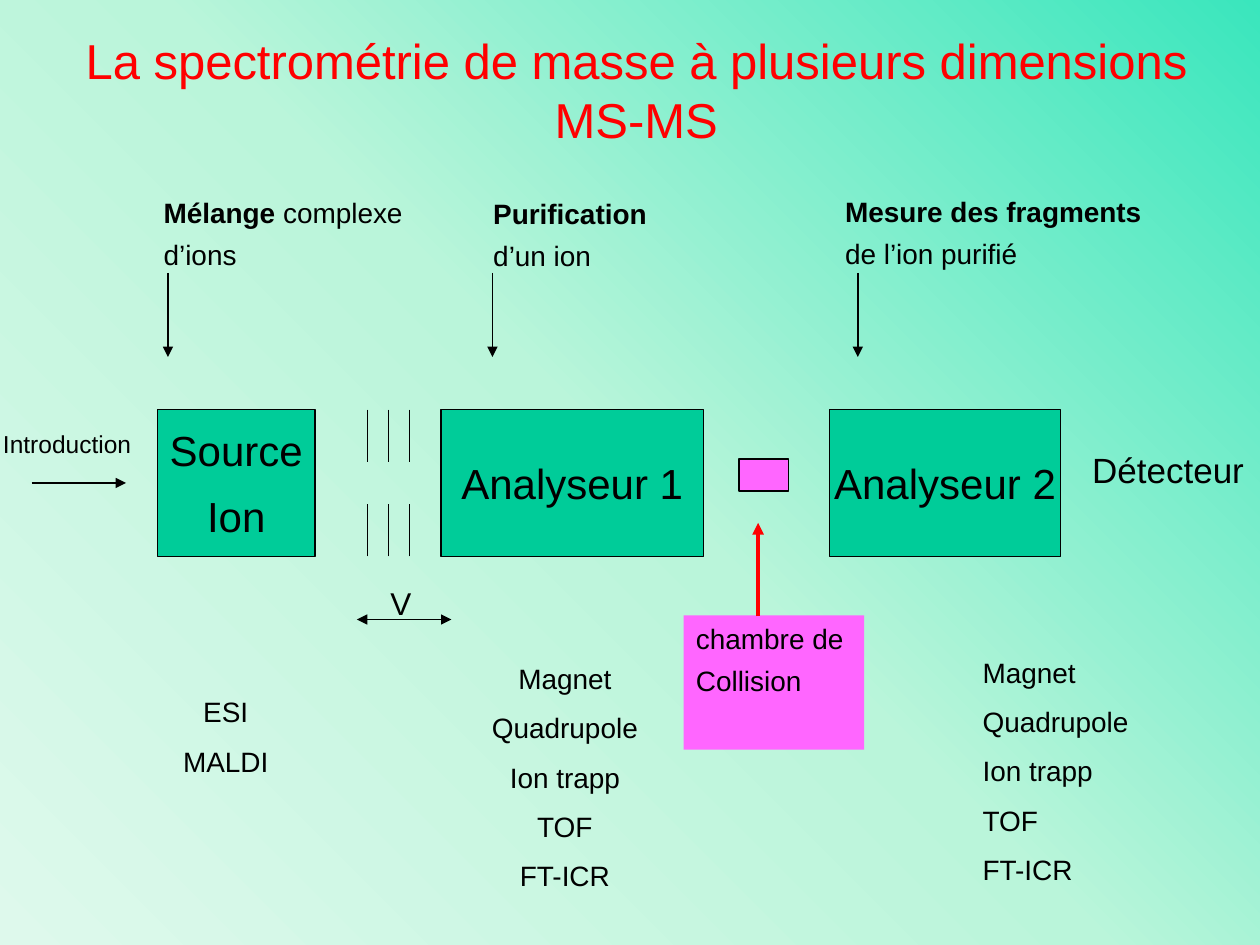
from copy import deepcopy
from dataclasses import dataclass

from lxml import etree
from pptx import Presentation
from pptx import util as u
from pptx.dml.color import RGBColor
from pptx.enum import shapes, text
from pptx.oxml.ns import qn


@dataclass(frozen=True)
class Theme:
    font: str = "Arial"
    ink: str = "000000"
    red: str = "FF0000"
    teal: str = "00CC99"
    pink: str = "FF66FF"
    back: tuple = ((0, "3AE6BD"), (0.5, "BAF5DA"), (1, "DEF9EC"))
    title: int = 28
    block: int = 24
    end: int = 20
    volt: int = 18
    body: int = 16
    small: int = 14


T = Theme()
COLS, ROWS = 120, 90
WIDE, HIGH = u.Inches(10), u.Inches(7.5)
MID, LEFT = text.PP_ALIGN.CENTER, text.PP_ALIGN.LEFT
TRAPS = ["Magnet", "Quadrupole", "Ion trapp", "TOF", "FT-ICR"]


def rgb(code):
    return RGBColor.from_string(code)


def grid(*vals):
    """Turn alternating columns and rows into slide lengths."""
    return [int(v * (HIGH / ROWS if i % 2 else WIDE / COLS))
            for i, v in enumerate(vals)]


def write(shape, lines, size=T.body, color=T.ink, align=MID, gap=9,
          wrap=False, anchor=text.MSO_ANCHOR.TOP):
    """Fill a shape with paragraphs; words between asterisks are bold."""
    frame = shape.text_frame
    frame.word_wrap = wrap
    frame.vertical_anchor = anchor
    for i, line in enumerate(lines):
        para = frame.paragraphs[0] if i == 0 else frame.add_paragraph()
        para.alignment = align
        para.space_before = u.Pt(gap)
        for j, part in enumerate(line.split("*")):
            if not part:
                continue
            run = para.add_run()
            run.text = part
            font = run.font
            font.name, font.size, font.bold = T.font, u.Pt(size), j % 2 == 1
            font.color.rgb = rgb(color)


def label(slide, at, lines, **fmt):
    write(slide.shapes.add_textbox(*grid(*at)), lines, **fmt)


def box(slide, at, fill, width=0.75):
    shape = slide.shapes.add_shape(shapes.MSO_SHAPE.RECTANGLE, *grid(*at))
    shape.shadow.inherit = False
    shape.fill.solid()
    shape.fill.fore_color.rgb = rgb(fill)
    if width:
        shape.line.color.rgb = rgb(T.ink)
        shape.line.width = u.Pt(width)
    else:
        shape.line.fill.background()
    return shape


def line(slide, ends, color=T.ink, width=0.75, tips=()):
    """Draw a line; tips names the ends (headEnd, tailEnd) with arrowheads."""
    link = slide.shapes.add_connector(shapes.MSO_CONNECTOR.STRAIGHT, *grid(*ends))
    link.line.color.rgb = rgb(color)
    link.line.width = u.Pt(width)
    for tip in tips:
        etree.SubElement(link.line._get_or_add_ln(), qn("a:" + tip), type="triangle")
    etree.SubElement(link._element.spPr, qn("a:effectLst"))


def paint(slide):
    """Lay the diagonal three-stop gradient on the background."""
    fill = slide.background.fill
    fill.gradient()
    fill.gradient_angle = 225
    stops = next(slide._element.iter(qn("a:gsLst")))
    stops.append(deepcopy(stops[-1]))
    for stop, (pos, code) in zip(fill.gradient_stops, T.back):
        stop.position = pos
        stop.color.rgb = rgb(code)


def blocks(slide):
    for x, wide, lines in ((15, 15, ["Source", "Ion"]),
                           (42, 25, ["Analyseur 1"]),
                           (79, 22, ["Analyseur 2"])):
        write(box(slide, (x, 39, wide, 14), T.teal), lines, size=T.block,
              anchor=text.MSO_ANCHOR.MIDDLE)


def steps(slide):
    for x, y, wide, stem, lines in (
            (14.4, 18, 27, 16, ["*Mélange* complexe", "d’ions"]),
            (45.8, 18.1, 18, 46.9, ["*Purification*", "d’un ion"]),
            (79.3, 17.9, 32, 81.7, ["*Mesure des fragments*", "de l’ion purifié"])):
        label(slide, (x, y, wide, 8.3), lines, align=LEFT, gap=5, wrap=True)
        line(slide, (stem, 26, stem, 34), width=1, tips=["tailEnd"])


def lens(slide):
    """Draw the accelerating plates and their voltage."""
    for x in (35, 37, 39):
        for start, stop in ((39, 44), (53, 48)):
            line(slide, (x, start, x, stop))
    line(slide, (34, 59, 43, 59), tips=["headEnd", "tailEnd"])
    label(slide, (36, 55, 4.2, 4.8), ["V"], size=T.volt)


def cell(slide):
    """Draw the collision cell and its caption."""
    box(slide, (70.4, 43.7, 4.7, 3.1), T.pink, width=1)
    write(box(slide, (65.1, 58.6, 17.2, 12.8), T.pink, width=0),
          ["chambre de", "Collision"], align=LEFT, gap=5, wrap=True)
    line(slide, (72.2, 58.7, 72.2, 49.8), color=T.red, width=2.25, tips=["tailEnd"])


def main():
    deck = Presentation()
    deck.slide_width, deck.slide_height = WIDE, HIGH
    slide = deck.slides.add_slide(deck.slide_layouts[6])
    paint(slide)
    label(slide, (4.8, 2.3, 111.6, 12.5),
          ["La spectrométrie de masse à plusieurs dimensions MS-MS"],
          size=T.title, color=T.red, gap=0, wrap=True,
          anchor=text.MSO_ANCHOR.MIDDLE)
    steps(slide)
    blocks(slide)
    lens(slide)
    cell(slide)
    line(slide, (3, 46, 12, 46), tips=["tailEnd"])
    label(slide, (-3.2, 40.3, 19.2, 4.1), ["Introduction"], size=T.small)
    label(slide, (102.8, 42.1, 16.9, 5.3), ["Détecteur"], size=T.end)
    label(slide, (15, 65.6, 13, 9), ["ESI", "MALDI"])
    label(slide, (45.6, 62.4, 16.4, 22.8), TRAPS)
    label(slide, (92.4, 61.8, 16.4, 22.8), TRAPS, align=LEFT, wrap=True)
    deck.save("out.pptx")


if __name__ == "__main__":
    main()
